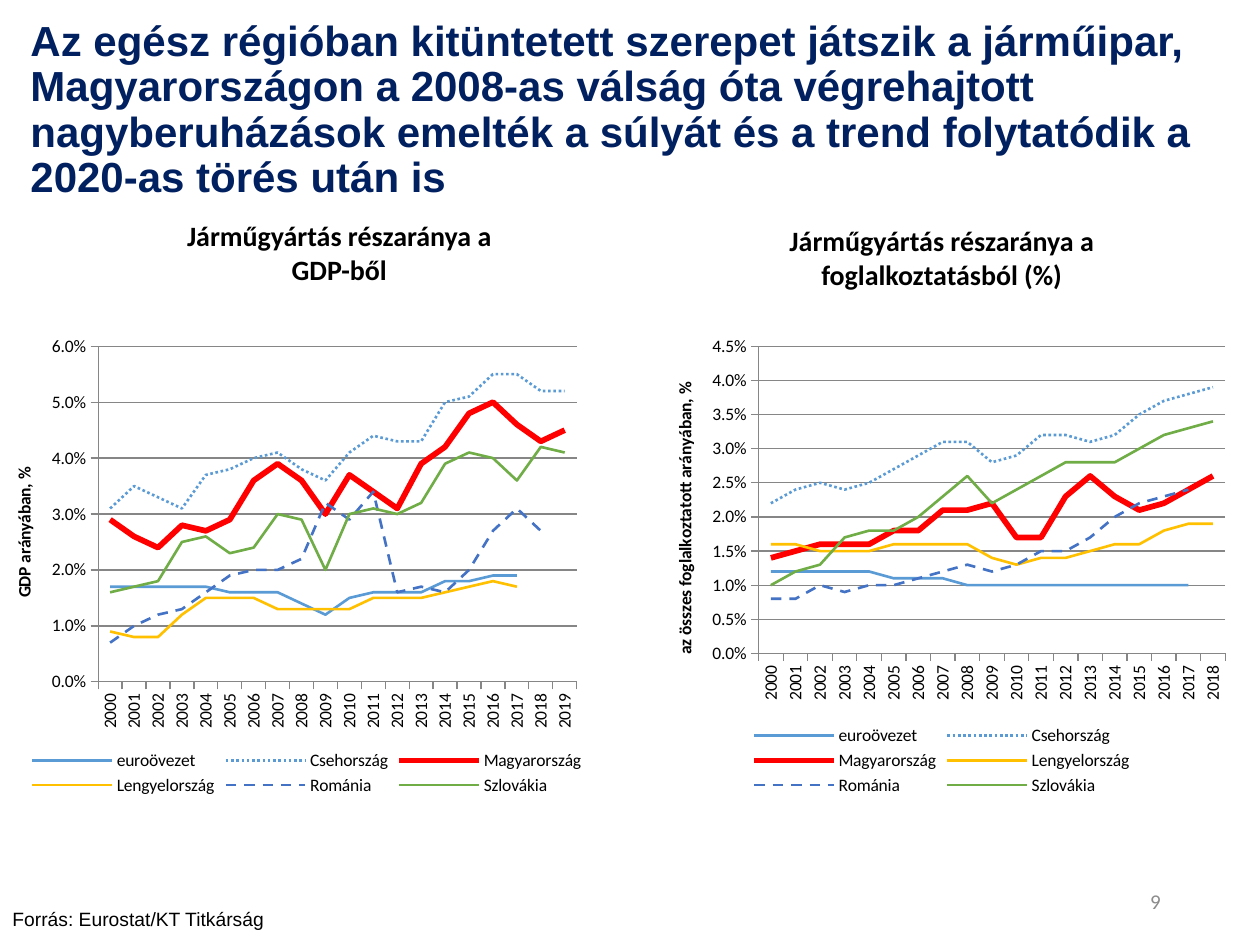
from math import ceil
from lxml.etree import SubElement
from pptx import Presentation
from pptx.chart.data import CategoryChartData
from pptx.dml.color import RGBColor
from pptx.enum.chart import XL_CHART_TYPE, XL_LEGEND_POSITION, XL_MARKER_STYLE, XL_TICK_MARK
from pptx.enum.dml import MSO_LINE
from pptx.enum.text import MSO_ANCHOR, MSO_AUTO_SIZE, PP_ALIGN
from pptx.oxml.ns import qn
from pptx.util import Cm, Pt

COLORS = {"navy": "002060", "black": "000000", "gray": "8C8C8C", "grid": "868686",
          "blue": "5B9BD5", "red": "FF0000", "gold": "FFC000",
          "indigo": "4472C4", "green": "70AD47"}

# Content
HEADLINE = ("Az egész régióban kitüntetett szerepet játszik a járműipar, Magyarországon "
            "a 2008-as válság óta végrehajtott nagyberuházások emelték a súlyát és a trend "
            "folytatódik a 2020-as törés után is")

# text, box in cm, size, font, colour, bold, alignment, anchor
LABELS = [
    ("9", (17.93, 17.65, 5.72, 1.02), 12, "Calibri", "gray", False, PP_ALIGN.RIGHT, MSO_ANCHOR.MIDDLE),
    ("Forrás: Eurostat/KT Titkárság", (0, 18.16, 8.05, 0.74), 11, "Arial", "black", False,
     PP_ALIGN.LEFT, MSO_ANCHOR.TOP),
    ("Járműgyártás részaránya a GDP-ből", (3.18, 4.29, 7.32, 1.63), 16, "Calibri", "black", True,
     PP_ALIGN.CENTER, MSO_ANCHOR.TOP),
    ("Járműgyártás részaránya a foglalkoztatásból (%)", (14.58, 4.39, 8.81, 1.63), 16, "Calibri",
     "black", True, PP_ALIGN.CENTER, MSO_ANCHOR.TOP),
]

# country: colour, dash
LINES = {
    "euroövezet": ("blue", None),
    "Csehország": ("blue", MSO_LINE.ROUND_DOT),
    "Magyarország": ("red", None),
    "Lengyelország": ("gold", None),
    "Románia": ("indigo", MSO_LINE.DASH),
    "Szlovákia": ("green", None),
}
HIGHLIGHT = "Magyarország"

# Shares in thousandths by year, one list per country in the order of LINES;
# "to" marks a year on the straight line between its neighbours
to = None
FIRST_YEAR = 2000
CHARTS = [
    {"axis": "GDP arányában, %", "left": 0, "width": 12.37, "plot": (0.16, 0.04, 0.78, 0.71),
     "shares": [
         [17, to, to, to, 17, 16, to, 16, 14, 12, 15, 16, to, 16, 18, to, to, 19],
         [31, 35, 33, 31, 37, to, to, 41, to, 36, 41, 44, 43, 43, 50, 51, 55, 55, 52, 52],
         [29, to, 24, 28, 27, 29, 36, 39, 36, 30, 37, to, 31, 39, 42, 48, 50, to, 43, 45],
         [9, to, 8, 12, 15, to, 15, 13, to, to, 13, 15, to, 15, to, to, 18, 17],
         [7, 10, 12, 13, to, 19, 20, 20, 22, 32, 29, 34, 16, 17, 16, 20, 27, 31, 27],
         [16, to, 18, 25, 26, 23, 24, 30, 29, 20, 30, 31, 30, 32, 39, 41, 40, 36, 42, 41],
     ]},
    {"axis": "az összes foglalkoztatott arányában, %", "left": 13.03, "width": 11.91,
     "plot": (0.19, 0.04, 0.79, 0.65),
     "shares": [
         [12, to, to, to, 12, 11, to, 11, 10, to, to, to, to, to, to, to, to, 10],
         [22, 24, 25, 24, 25, to, to, 31, 31, 28, 29, 32, 32, 31, 32, 35, 37, to, 39],
         [14, to, 16, to, 16, 18, 18, 21, 21, 22, 17, 17, 23, 26, 23, 21, 22, to, 26],
         [16, 16, 15, to, 15, 16, to, to, 16, 14, 13, 14, 14, to, 16, 16, 18, 19, 19],
         [8, 8, 10, 9, 10, 10, to, to, 13, 12, 13, 15, 15, 17, 20, 22, to, 24],
         [10, 12, 13, 17, 18, 18, 20, to, 26, 22, to, to, 28, to, 28, to, 32, to, 34],
     ]},
]


def color(name):
    return RGBColor.from_string(COLORS[name])


def style(font, size=10, face="Calibri", shade="black", bold=False):
    font.size, font.name, font.bold = Pt(size), face, bold
    font.color.rgb = color(shade)


def fill_years(shares):
    """Fill the marked years in whole thousandths and return fractions."""
    known = [year for year, share in enumerate(shares) if share is not None]
    filled = list(shares)
    for start, end in zip(known, known[1:]):
        rise = shares[end] - shares[start]
        for year in range(start + 1, end):
            exact = shares[start] + rise * (year - start) / (end - start)
            filled[year] = ceil(exact - 0.5)
    return [share / 1000 for share in filled]


def place_plot(chart, numbers):
    """Fix the inner plot area, as fractions of the chart."""
    area = chart.plots[0]._element.getparent()
    for old in area.findall(qn("c:layout")):
        area.remove(old)
    layout = SubElement(area, qn("c:layout"))
    manual = SubElement(layout, qn("c:manualLayout"))
    settings = [("layoutTarget", "inner"), ("xMode", "edge"), ("yMode", "edge"), *zip("xywh", numbers)]
    for tag, setting in settings:
        SubElement(manual, qn(f"c:{tag}")).set("val", str(setting))
    area.insert(0, layout)


def add_label(slide, text, box, size, face, shade, bold, align, anchor):
    frame = slide.shapes.add_textbox(*map(Cm, box)).text_frame
    frame.word_wrap, frame.vertical_anchor = True, anchor
    paragraph = frame.paragraphs[0]
    paragraph.alignment = align
    run = paragraph.add_run()
    run.text = text
    style(run.font, size, face, shade, bold)


def add_share_chart(slide, content):
    span = max(map(len, content["shares"]))
    data = CategoryChartData(number_format="0.0%")
    data.categories = [str(FIRST_YEAR + year) for year in range(span)]
    for country, shares in zip(LINES, content["shares"]):
        data.add_series(country, fill_years(shares) + [None] * (span - len(shares)))
    box = (content["left"], 6.6, content["width"], 9.53)
    chart = slide.shapes.add_chart(XL_CHART_TYPE.LINE, *map(Cm, box), data).chart
    chart.has_title = False
    style(chart.font)
    place_plot(chart, content["plot"])

    # Country lines
    for series in chart.plots[0].series:
        shade, dash = LINES[series.name]
        series.smooth = False
        series.marker.style = XL_MARKER_STYLE.NONE
        line = series.format.line
        line.color.rgb = color(shade)
        line.width = Pt(3.25 if series.name == HIGHLIGHT else 1.5)
        if dash:
            line.dash_style = dash

    # Axes
    share_axis, year_axis = chart.value_axis, chart.category_axis
    share_axis.minimum_scale = 0
    share_axis.tick_labels.number_format = "0.0%"
    share_axis.tick_labels.number_format_is_linked = False
    for axis in (share_axis, year_axis):
        axis.major_tick_mark = XL_TICK_MARK.OUTSIDE
        style(axis.tick_labels.font)
    for lined in (share_axis, year_axis, share_axis.major_gridlines):
        lined.format.line.color.rgb = color("grid")
        lined.format.line.width = Pt(0.75)

    # Axis title
    caption = share_axis.axis_title.text_frame
    run = caption.paragraphs[0].add_run()
    run.text = content["axis"]
    style(run.font, bold=True)

    # Years and axis title read upwards
    for turned in (year_axis._element.find(qn("c:txPr")), caption._txBody):
        turned.find(qn("a:bodyPr")).set("rot", "-5400000")
        turned.find(qn("a:bodyPr")).set("vert", "horz")

    # Legend
    chart.has_legend = True
    chart.legend.position = XL_LEGEND_POSITION.BOTTOM
    chart.legend.include_in_layout = False
    style(chart.legend.font)


def main():
    deck = Presentation()
    deck.slide_width, deck.slide_height = Cm(25.4), Cm(19.05)
    slide = deck.slides.add_slide(deck.slide_layouts[5])

    # Headline
    title = slide.shapes.title
    title.left, title.top, title.width, title.height = map(Cm, (0.36, 0.66, 24.84, 3.15))
    frame = title.text_frame
    frame.auto_size, frame.vertical_anchor = MSO_AUTO_SIZE.NONE, MSO_ANCHOR.MIDDLE
    paragraph = frame.paragraphs[0]
    paragraph.alignment, paragraph.line_spacing = PP_ALIGN.LEFT, 0.9
    run = paragraph.add_run()
    run.text = HEADLINE
    style(run.font, 24, "Arial", "navy", True)

    # Page number, source and chart headings
    for label in LABELS:
        add_label(slide, *label)

    # Charts
    for content in CHARTS:
        add_share_chart(slide, content)

    deck.save("out.pptx")


if __name__ == "__main__":
    main()
